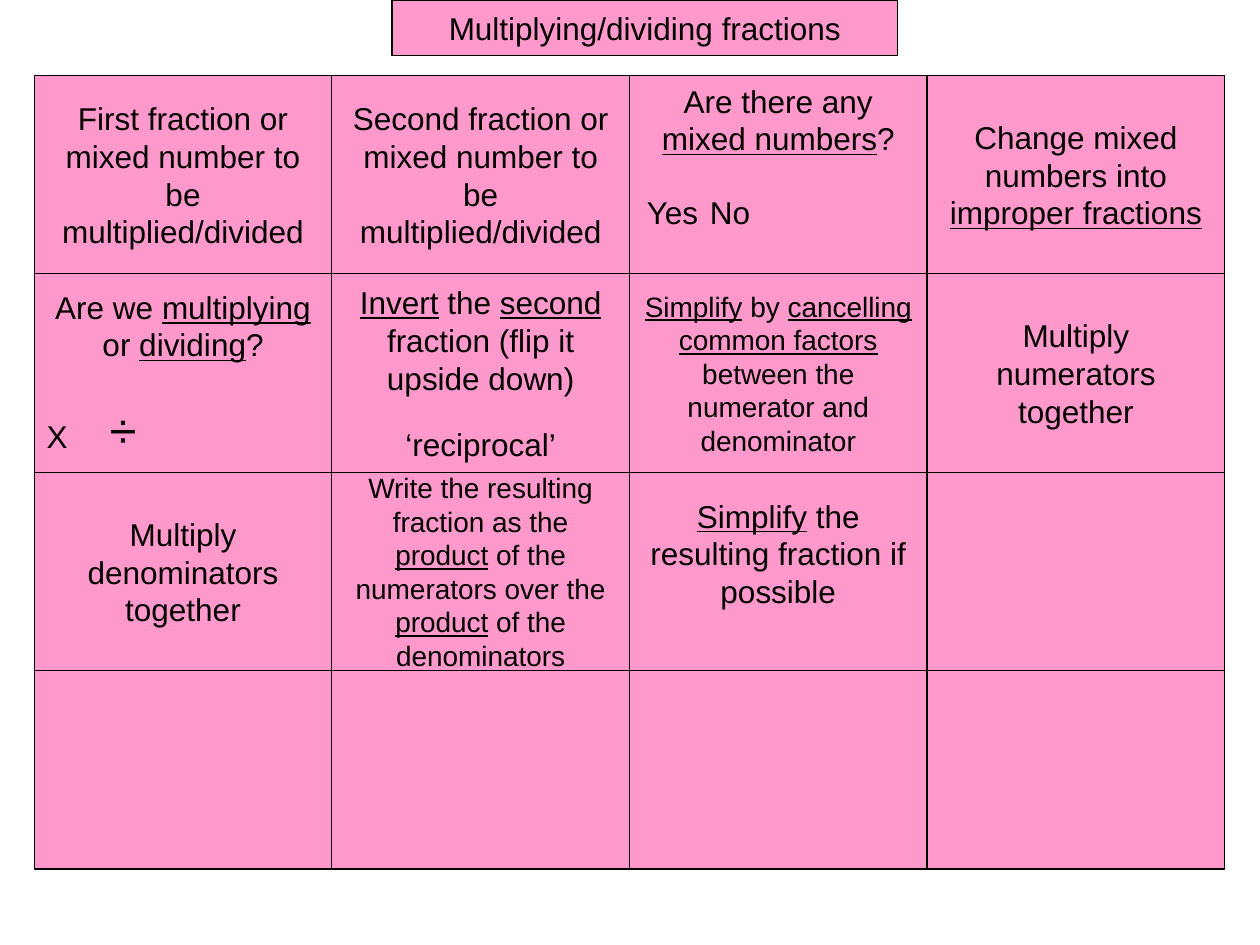
from lxml.etree import SubElement
from pptx import Presentation
from pptx.dml.color import RGBColor
from pptx.enum.shapes import MSO_SHAPE
from pptx.enum.text import MSO_ANCHOR, MSO_AUTO_SIZE, PP_ALIGN
from pptx.oxml.ns import qn
from pptx.util import Cm, Pt

COLOURS = {"card": "FF99CC", "ink": "000000"}
FONT = "Arial"
TITLE = "Multiplying/dividing fractions"

# Underscores enclose underlined words. Gaps are in points; "choice" is a line
# of two answers, the second at a tab: (text, indent cm, tab cm, tab side).
CARDS = [
    {"text": "First fraction or mixed number to be multiplied/divided"},
    {"text": "Second fraction or mixed number to be multiplied/divided"},
    {"text": "Are there any _mixed numbers_?", "gap": 20.7, "bottom_gap": 20.7,
     "choice": ("Yes\tNo", 0.1, 5.36, "r")},
    {"text": "Change mixed numbers into _improper fractions_"},
    {"text": "Are we _multiplying_ or _dividing_?", "gap": 20.7,
     "choice": ("X\t÷", 0, 4.27, "l")},
    {"text": "_Invert_ the _second_ fraction (flip it upside down)", "gap": 16.1,
     "term": "‘reciprocal’"},
    {"text": "_Simplify_ by _cancelling common factors_ between the numerator "
             "and denominator", "size": 16},
    {"text": "Multiply numerators together"},
    {"text": "Multiply denominators together"},
    {"text": "Write the resulting fraction as the _product_ of the numerators "
             "over the _product_ of the denominators", "size": 16},
    {"text": "_Simplify_ the resulting fraction if possible", "bottom_gap": 20.7},
]
COLUMNS, ROWS = 4, 4
GRID_LEFT, GRID_TOP = 0.69, 1.52
CARD_WIDTH, CARD_HEIGHT = 6, 4


def colour(name):
    return RGBColor.from_string(COLOURS[name])


def style_box(box):
    box.fill.solid()
    box.fill.fore_color.rgb = colour("card")
    box.line.color.rgb = colour("ink")
    box.line.width = Pt(0.75)
    box.text_frame.vertical_anchor = MSO_ANCHOR.MIDDLE


def style_run(run, size=18, underlined=False):
    run.font.name = FONT
    run.font.size = Pt(size)
    run.font.color.rgb = colour("ink")
    run.font.underline = underlined


def write_marked(paragraph, text, size=18):
    """Write text, underlining every part enclosed in underscores."""
    paragraph.alignment = PP_ALIGN.CENTER
    for index, part in enumerate(text.split("_")):
        if part:
            run = paragraph.add_run()
            run.text = part
            style_run(run, size, index % 2 == 1)


def write_choice(paragraph, text, indent, tab, side):
    paragraph.alignment = PP_ALIGN.LEFT
    properties = paragraph._p.get_or_add_pPr()
    properties.set("marL", str(Cm(indent)))
    properties.set("indent", "0")
    tabs = SubElement(properties, qn("a:tabLst"))
    SubElement(tabs, qn("a:tab"), pos=str(Cm(tab)), algn=side)
    first, second = text.split("\t")
    for answer in (first + "\t", second):
        run = paragraph.add_run()
        run.text = answer
        style_run(run, 28 if answer == "÷" else 18)


def fill_card(frame, card):
    frame.word_wrap = True
    frame.margin_bottom += Pt(card.get("bottom_gap", 0))
    write_marked(frame.paragraphs[0], card["text"], card.get("size", 18))
    if "gap" in card:
        last = frame.add_paragraph()
        last.space_before = Pt(card["gap"])
        if "choice" in card:
            write_choice(last, *card["choice"])
        else:
            write_marked(last, card["term"])


def main():
    deck = Presentation()
    deck.slide_width, deck.slide_height = Cm(25.4), Cm(19.05)
    slide = deck.slides.add_slide(deck.slide_layouts[5])

    for position in range(COLUMNS * ROWS):
        row, column = divmod(position, COLUMNS)
        box = slide.shapes.add_shape(
            MSO_SHAPE.RECTANGLE,
            Cm(GRID_LEFT + column * CARD_WIDTH), Cm(GRID_TOP + row * CARD_HEIGHT),
            Cm(CARD_WIDTH), Cm(CARD_HEIGHT))
        box.shadow.inherit = False
        style_box(box)
        if position < len(CARDS):
            fill_card(box.text_frame, CARDS[position])

    title = slide.shapes.title
    title.left, title.top, title.width, title.height = Cm(7.9), 0, Cm(10.2), Cm(1.12)
    style_box(title)
    title.text_frame.auto_size = MSO_AUTO_SIZE.NONE
    title.text_frame.word_wrap = False
    write_marked(title.text_frame.paragraphs[0], TITLE)

    deck.save("out.pptx")


if __name__ == "__main__":
    main()
